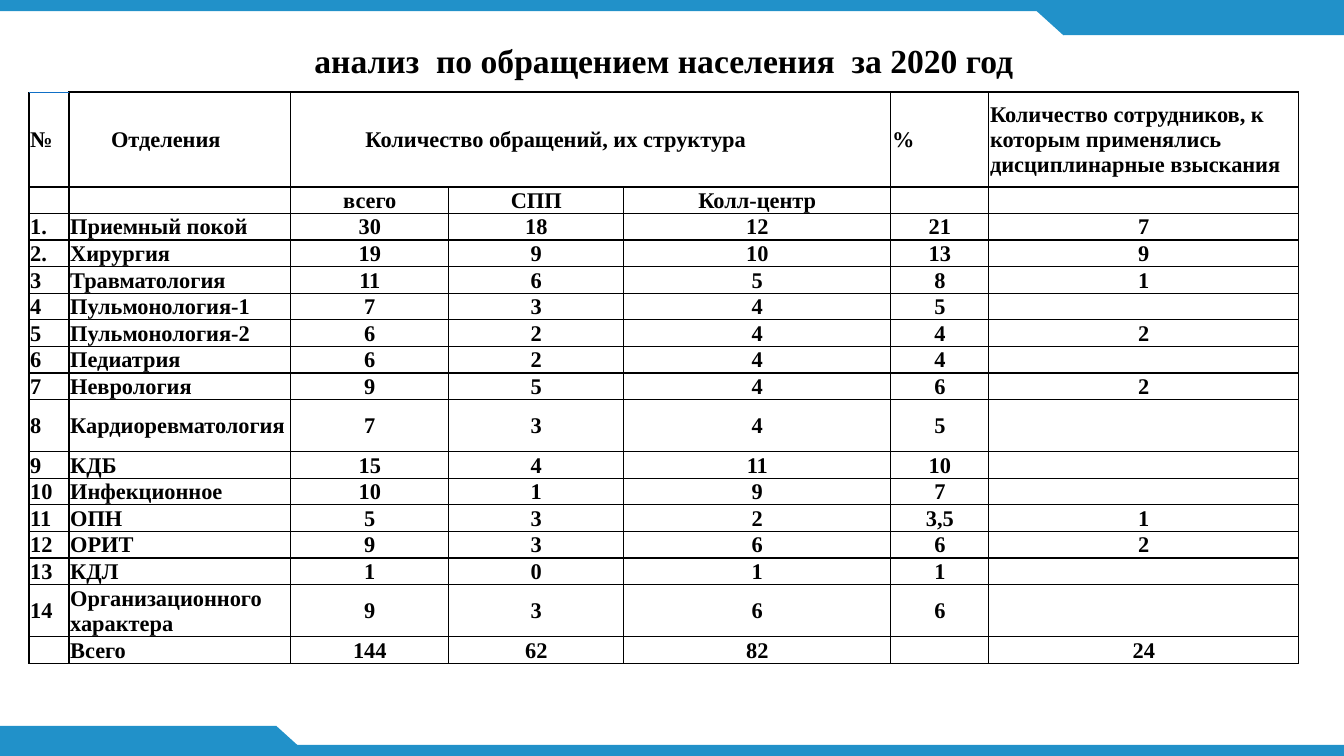
from lxml import etree
from pptx import Presentation
from pptx.dml.color import RGBColor
from pptx.enum import shapes, text
from pptx.oxml.ns import qn
from pptx.util import Cm, Pt

# Content
TITLE = "анализ  по обращением населения  за 2020 год"
HEADINGS = ["№", "Отделения", "Количество обращений, их структура", "", "", "%",
            "Количество сотрудников, к которым применялись дисциплинарные взыскания"]
SUBHEADINGS = ["", "", "всего", "СПП", "Колл-центр", "", ""]
DEPARTMENTS = [
    ("1.", "Приемный покой", "30", "18", "12", "21", "7"),
    ("2.", "Хирургия", "19", "9", "10", "13", "9"),
    ("3", "Травматология", "11", "6", "5", "8", "1"),
    ("4", "Пульмонология-1", "7", "3", "4", "5", ""),
    ("5", "Пульмонология-2", "6", "2", "4", "4", "2"),
    ("6", "Педиатрия", "6", "2", "4", "4", ""),
    ("7", "Неврология", "9", "5", "4", "6", "2"),
    ("8", "Кардиоревматология", "7", "3", "4", "5", ""),
    ("9", "КДБ", "15", "4", "11", "10", ""),
    ("10", "Инфекционное", "10", "1", "9", "7", ""),
    ("11", "ОПН", "5", "3", "2", "3,5", "1"),
    ("12", "ОРИТ", "9", "3", "6", "6", "2"),
    ("13", "КДЛ", "1", "0", "1", "1", ""),
    ("14", "Организационного характера", "9", "3", "6", "6", ""),
]
TOTAL = ("", "Всего", "144", "62", "82", "", "24")
TALL_DEPARTMENTS = ("Кардиоревматология", "Организационного характера")

THEME = {
    "font": "Times New Roman",
    "title": Pt(24), "body": Pt(16),
    "ink": RGBColor(0, 0, 0),
    "band": RGBColor(0x21, 0x91, 0xC9),
    "accent": RGBColor(0x0F, 0x6F, 0xC6),
    "no_grid_style": "{2D5ABB26-0587-4C30-8999-92F81FD0307C}",
}

# Measures in centimetres
SLIDE_W, SLIDE_H = 33.87, 19.05
BAND_H, TAB_H = 0.28, 0.76
TABLE_LEFT, TABLE_TOP = 0.73, 0.79
COLUMN_WIDTHS = [1.01, 5.59, 3.98, 4.41, 6.73, 2.47, 7.81]
TITLE_H, HEADING_H, ROW_H, TALL_H = 1.53, 2.39, 0.67, 1.31
HEADING_INDENTS = {1: 1.03, 2: 1.85}
CELL_MARGIN = 0.03

presentation = Presentation()
presentation.slide_width, presentation.slide_height = Cm(SLIDE_W), Cm(SLIDE_H)
slide = presentation.slides.add_slide(presentation.slide_layouts[6])


def add_band(kind, left, top, width, height, rotation=0):
    band = slide.shapes.add_shape(kind, Cm(left), Cm(top), Cm(width), Cm(height))
    band.rotation = rotation
    band.shadow.inherit = False
    band.fill.solid()
    band.fill.fore_color.rgb = THEME["band"]
    band.line.fill.background()


def add_borders(cell, sides):
    properties = cell._tc.get_or_add_tcPr()
    for side in sides:
        border = etree.SubElement(properties, qn(f"a:ln{side}"), w=str(Pt(1)))
        fill = etree.SubElement(border, qn("a:solidFill"))
        etree.SubElement(fill, qn("a:srgbClr"), val=str(THEME["ink"]))


def write_cell(cell, words, size, centred, indent=0):
    cell.fill.background()
    cell.vertical_anchor = text.MSO_ANCHOR.MIDDLE
    cell.margin_left = Cm(CELL_MARGIN + indent)
    cell.margin_right = cell.margin_top = Cm(CELL_MARGIN)
    cell.margin_bottom = 0
    paragraph = cell.text_frame.paragraphs[0]
    paragraph.alignment = text.PP_ALIGN.CENTER if centred else text.PP_ALIGN.LEFT
    paragraph.font.name, paragraph.font.size = THEME["font"], size
    paragraph.font.bold = True
    paragraph.font.color.rgb = THEME["ink"]
    if words:
        paragraph.add_run().text = words
    else:  # keeps an empty row as low as a filled one
        etree.SubElement(paragraph._p, qn("a:endParaRPr"), sz=str(int(size.pt * 100)))


# Blue bands along the top and bottom, each with a slanted tab
RECTANGLE, MERGE = shapes.MSO_SHAPE.RECTANGLE, shapes.MSO_SHAPE.FLOWCHART_MERGE
add_band(RECTANGLE, 0, 0, SLIDE_W, BAND_H)
add_band(RECTANGLE, 0, SLIDE_H - BAND_H, SLIDE_W, BAND_H)
add_band(RECTANGLE, 26.8, 0.13, SLIDE_W - 26.8, TAB_H)
add_band(MERGE, 25.96, 0.13, 1.68, TAB_H)
add_band(RECTANGLE, 0, SLIDE_H - TAB_H, 6.96, TAB_H)
add_band(MERGE, 6.12, SLIDE_H - TAB_H, 1.68, TAB_H, rotation=180)

# Table grid
rows = [[TITLE] + [""] * 6, HEADINGS, SUBHEADINGS, *DEPARTMENTS, TOTAL]
heights = [TITLE_H, HEADING_H] + [
    TALL_H if row[1] in TALL_DEPARTMENTS else ROW_H for row in rows[2:]]
frame = slide.shapes.add_table(len(rows), len(COLUMN_WIDTHS), Cm(TABLE_LEFT), Cm(TABLE_TOP),
                               Cm(sum(COLUMN_WIDTHS)), Cm(sum(heights)))
appeals = frame.table
appeals.first_row = appeals.horz_banding = False
appeals._tbl.tblPr.find(qn("a:tableStyleId")).text = THEME["no_grid_style"]
for column, width in zip(appeals.columns, COLUMN_WIDTHS):
    column.width = Cm(width)
for table_row, height in zip(appeals.rows, heights):
    table_row.height = Cm(height)
appeals.cell(0, 0).merge(appeals.cell(0, 6))
appeals.cell(1, 2).merge(appeals.cell(1, 4))

# Table cells: the title row has no borders, the number heading no top border
for r, row in enumerate(rows):
    for c, words in enumerate(row):
        cell = appeals.cell(r, c)
        if r > 0:
            add_borders(cell, "LRB" if (r, c) == (1, 0) else "LRTB")
        write_cell(cell, words, THEME["body"] if r else THEME["title"],
                   centred=r == 0 or (r > 1 and c > 1),
                   indent=HEADING_INDENTS.get(c, 0) if r == 1 else 0)

# Blue rule above the number heading
rule_y = Cm(TABLE_TOP + TITLE_H)
rule = slide.shapes.add_connector(shapes.MSO_CONNECTOR.STRAIGHT, Cm(TABLE_LEFT), rule_y,
                                  Cm(TABLE_LEFT + COLUMN_WIDTHS[0]), rule_y)
rule.line.color.rgb = THEME["accent"]
rule.line.width = Pt(0.5)
etree.SubElement(rule._element.spPr, qn("a:effectLst"))

presentation.save("out.pptx")
